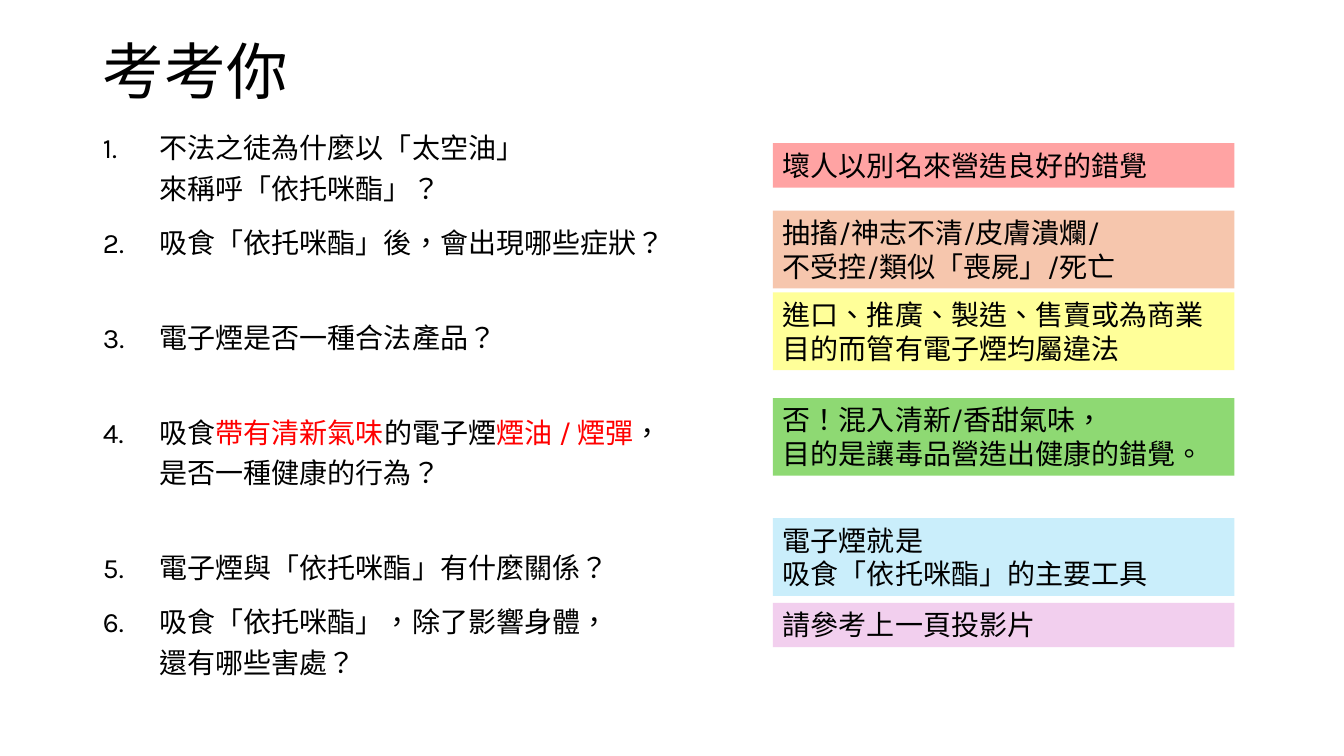
from copy import deepcopy

from lxml.etree import SubElement
from pptx import Presentation
from pptx.dml.color import RGBColor
from pptx.enum.lang import MSO_LANGUAGE_ID
from pptx.enum.shapes import MSO_SHAPE
from pptx.enum.text import MSO_ANCHOR, MSO_AUTO_SIZE, PP_ALIGN
from pptx.oxml.ns import qn
from pptx.util import Cm, Pt

FONT = "Karla"
BLACK = "000000"
RED = "FF0000"
LINE_GAP = 29

QUESTIONS = [
    (10, [("不法之徒為什麼以「太空油」\n來稱呼「依托咪酯」？", BLACK)]),
    (10, [("吸食「依托咪酯」後，會出現哪些症狀？", BLACK)]),
    (10 + LINE_GAP, [("電子煙是否一種合法產品？", BLACK)]),
    (10 + LINE_GAP, [
        ("吸食", BLACK),
        ("帶有清新氣味", RED),
        ("的電子煙", BLACK),
        ("煙油 / 煙彈", RED),
        ("，\n是否一種健康的行為？", BLACK),
    ]),
    (10 + LINE_GAP, [("電子煙與「依托咪酯」有什麼關係？", BLACK)]),
    (10, [("吸食「依托咪酯」，除了影響身體，\n還有哪些害處？", BLACK)]),
]

ANSWERS = [
    (3.61, 1.12, "FFA3A3", ["壞人以別名來營造良好的錯覺"]),
    (5.31, 1.96, "F6C6AD", ["抽搐/神志不清/皮膚潰爛/", "不受控/類似「喪屍」/死亡"]),
    (7.37, 1.96, "FFFF99", ["進口、推廣、製造、售賣或為商業目的而管有電子煙均屬違法"]),
    (10.03, 1.96, "8ED973", ["否！混入清新/香甜氣味，", "目的是讓毒品營造出健康的錯覺。"]),
    (13.06, 1.96, "CAEEFB", ["電子煙就是", "吸食「依托咪酯」的主要工具"]),
    (15.19, 1.12, "F2CFEE", ["請參考上一頁投影片"]),
]


def set_color(color_format, value):
    color_format.rgb = RGBColor.from_string(value)


def write_text(paragraph, text, size=20, color=BLACK):
    for index, line in enumerate(text.split("\n")):
        if index:
            paragraph.add_line_break()
            paragraph._p[-1].append(deepcopy(run.font._element))
        run = paragraph.add_run()
        run.text = line
        run.font.size = Pt(size)
        run.font.name = FONT
        run.font.language_id = MSO_LANGUAGE_ID.CHINESE_HONG_KONG_SAR
        set_color(run.font.color, color)
        SubElement(run.font._element, qn("a:ea")).set("typeface", FONT)


def place(shape, left, top, width, height):
    shape.left, shape.top = Cm(left), Cm(top)
    shape.width, shape.height = Cm(width), Cm(height)


def next_paragraph(text_frame, index):
    return text_frame.add_paragraph() if index else text_frame.paragraphs[0]


def number_paragraph(paragraph):
    properties = paragraph._p.get_or_add_pPr()
    properties.set("marL", str(Cm(1.43)))
    properties.set("indent", str(-Cm(1.43)))
    SubElement(properties, qn("a:buFont")).set("typeface", FONT)
    SubElement(properties, qn("a:buAutoNum")).set("type", "arabicPeriod")


def fill_title(title, text):
    place(title, 2.34, 0.3, 29.21, 3.18)
    title.text_frame.auto_size = MSO_AUTO_SIZE.NONE
    title.text_frame.vertical_anchor = MSO_ANCHOR.MIDDLE
    paragraph = title.text_frame.paragraphs[0]
    paragraph.alignment = PP_ALIGN.LEFT
    paragraph.line_spacing = 0.9
    write_text(paragraph, text, size=44)


def fill_questions(body):
    place(body, 2.34, 3, 16.54, 15.75)
    body.text_frame.auto_size = MSO_AUTO_SIZE.NONE
    for index, (space_before, parts) in enumerate(QUESTIONS):
        paragraph = next_paragraph(body.text_frame, index)
        paragraph.line_spacing = 1.2
        paragraph.space_before = Pt(space_before)
        number_paragraph(paragraph)
        for text, color in parts:
            write_text(paragraph, text, color=color)


def add_answer(slide, top, height, fill, lines):
    shape = slide.shapes.add_shape(
        MSO_SHAPE.RECTANGLE, Cm(19.48), Cm(top), Cm(11.63), Cm(height))
    shape.shadow.inherit = False
    shape.fill.solid()
    set_color(shape.fill.fore_color, fill)
    shape.line.fill.background()
    text_frame = shape.text_frame
    text_frame.word_wrap = True
    text_frame.auto_size = MSO_AUTO_SIZE.SHAPE_TO_FIT_TEXT
    text_frame.vertical_anchor = MSO_ANCHOR.TOP
    for index, line in enumerate(lines):
        paragraph = next_paragraph(text_frame, index)
        paragraph.alignment = PP_ALIGN.LEFT
        write_text(paragraph, line)


def main():
    presentation = Presentation()
    presentation.slide_width = Cm(33.87)
    presentation.slide_height = Cm(19.05)
    slide = presentation.slides.add_slide(presentation.slide_layouts[1])
    fill_title(slide.shapes.title, "考考你")
    fill_questions(slide.placeholders[1])
    for answer in ANSWERS:
        add_answer(slide, *answer)
    presentation.save("out.pptx")


if __name__ == "__main__":
    main()
